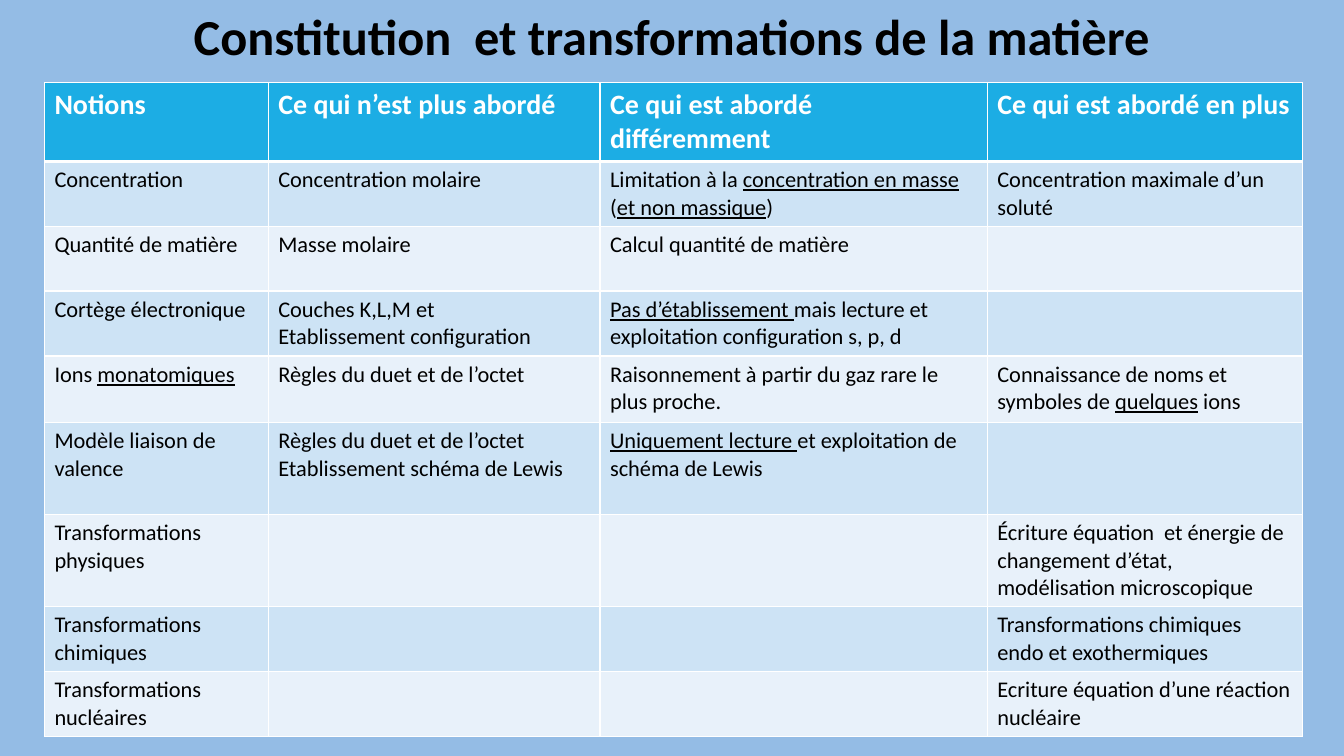
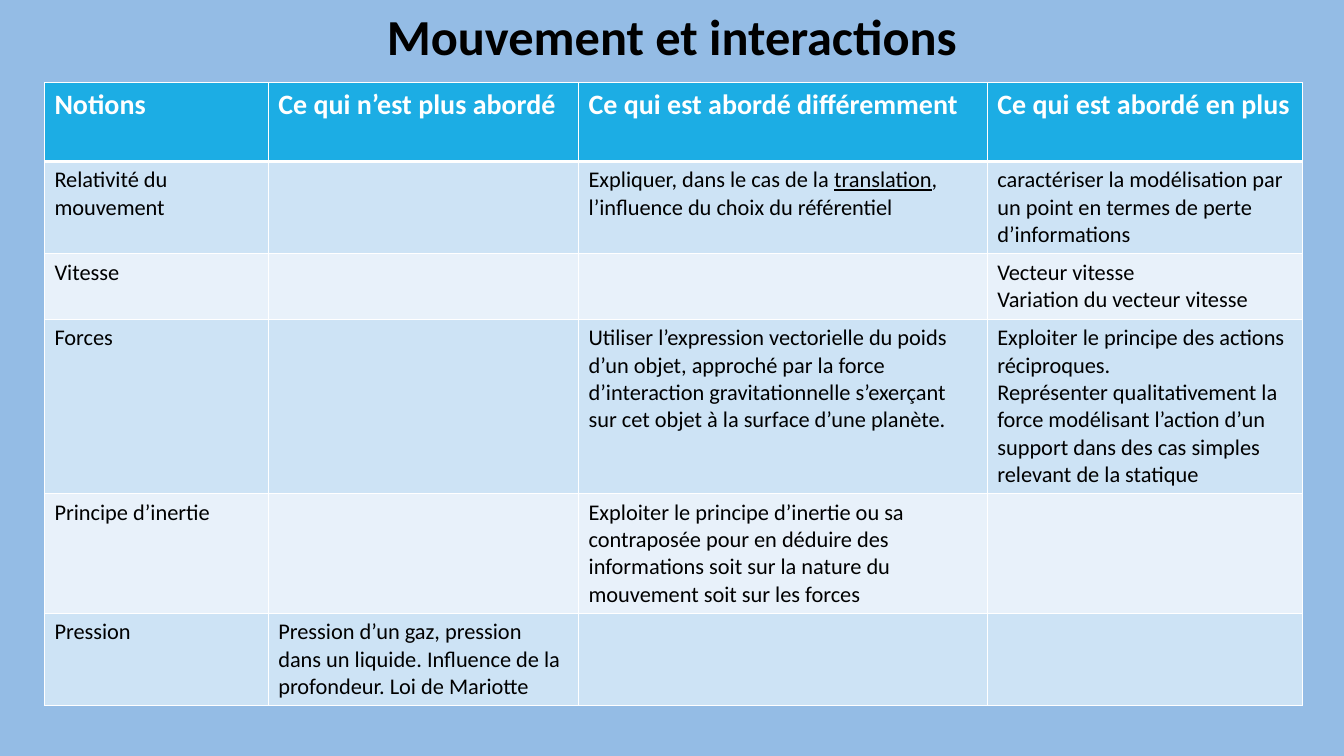
from dataclasses import dataclass

from lxml.etree import SubElement
from pptx import Presentation
from pptx.dml.color import RGBColor
from pptx.enum.text import MSO_ANCHOR, PP_ALIGN
from pptx.oxml.ns import qn
from pptx.util import Cm, Pt


@dataclass(frozen=True)
class Theme:
    font: str = "Calibri"
    background: str = "94BCE5"
    header: str = "1CADE4"
    bands: tuple = ("CDE3F5", "E8F1FA")
    text: str = "000000"
    light: str = "FFFFFF"
    title_size: int = 36
    header_size: int = 20
    body_size: int = 16
    border: int = 1
    header_border: int = 3


HEADINGS = (
    "Notions",
    "Ce qui n’est plus abordé",
    "Ce qui est abordé différemment",
    "Ce qui est abordé en plus",
)

# Underscores enclose underlined words; each row starts with its height in cm.
MATTER_ROWS = [
    (1.63, "Concentration", "Concentration molaire",
     "Limitation à la _concentration en masse _(_et non massique_)",
     "Concentration maximale d’un soluté"),
    (1.63, "Quantité de matière", "Masse molaire", "Calcul quantité de matière", ""),
    (1.63, "Cortège électronique", "Couches K,L,M et\nEtablissement configuration",
     "_Pas d’établissement _mais lecture et exploitation configuration s, p, d", ""),
    (1.67, "Ions _monatomiques_", "Règles du duet et de l’octet",
     "Raisonnement à partir du gaz rare le plus proche.",
     "Connaissance de noms et symboles de _quelques_ ions"),
    (2.32, "Modèle liaison de valence",
     "Règles du duet et de l’octet\nEtablissement schéma de Lewis",
     "_Uniquement lecture _et exploitation de schéma de Lewis", ""),
    (2.32, "Transformations\nphysiques", "", "",
     "Écriture équation  et énergie de changement d’état, modélisation microscopique"),
    (1.63, "Transformations chimiques", "", "",
     "Transformations chimiques endo et exothermiques"),
    (1.63, "Transformations nucléaires", "", "",
     "Ecriture équation d’une réaction nucléaire"),
]

MOTION_ROWS = [
    (2.26, "Relativité du mouvement", "",
     "Expliquer, dans le cas de la _translation_, l’influence du choix du référentiel",
     "caractériser la modélisation par un point en termes de perte d’informations"),
    (1.65, "Vitesse", "", "", "Vecteur vitesse\nVariation du vecteur vitesse"),
    (4.3, "Forces", "",
     "Utiliser l’expression vectorielle du poids d’un objet, approché par la force "
     "d’interaction gravitationnelle s’exerçant sur cet objet à la surface d’une planète.",
     "Exploiter le principe des actions réciproques.\n"
     "Représenter qualitativement la force modélisant l’action d’un support "
     "dans des cas simples relevant de la statique"),
    (2.96, "Principe d’inertie", "",
     "Exploiter le principe d’inertie ou sa contraposée pour en déduire des "
     "informations soit sur la nature du mouvement soit sur les forces", ""),
    (2.26, "Pression",
     "Pression d’un gaz, pression dans un liquide. Influence de la profondeur. "
     "Loi de Mariotte", "", ""),
]


def write(frame, text, *, font, size, color, bold=False, align=PP_ALIGN.LEFT):
    """Fill a text frame: newlines part paragraphs, underscores enclose underlines."""
    for index, line in enumerate(text.split("\n")):
        para = frame.add_paragraph() if index else frame.paragraphs[0]
        para.alignment = align
        for position, words in enumerate(line.split("_")):
            if not words:
                continue
            span = para.add_run()
            span.text = words
            span.font.name = font
            span.font.size = Pt(size)
            span.font.bold = bold
            span.font.underline = position % 2 == 1
            span.font.color.rgb = RGBColor.from_string(color)


def set_borders(cell, color, **widths):
    """Draw cell borders, given in points by side; call before setting the fill."""
    properties = cell._tc.get_or_add_tcPr()
    for side in ("L", "R", "T", "B"):
        line = SubElement(properties, qn(f"a:ln{side}"), w=str(Pt(widths[side])))
        fill = SubElement(line, qn("a:solidFill"))
        SubElement(fill, qn("a:srgbClr"), val=color)


class ProgrammeDeck:
    def __init__(self, theme):
        self.theme = theme
        self.deck = Presentation()
        self.deck.slide_width, self.deck.slide_height = Cm(33.87), Cm(19.05)
        fill = self.deck.slide_master.background.fill
        fill.solid()
        fill.fore_color.rgb = RGBColor.from_string(theme.background)
        self.page = None

    def add_page(self, title):
        theme = self.theme
        self.page = self.deck.slides.add_slide(self.deck.slide_layouts.get_by_name("Title Only"))
        box = self.page.shapes.title
        box.left, box.top = Cm(0), Cm(0)
        box.width, box.height = self.deck.slide_width, Cm(1.8)
        box.text_frame.vertical_anchor = MSO_ANCHOR.TOP
        write(box.text_frame, title, font=theme.font, size=theme.title_size,
              color=theme.text, bold=True, align=PP_ALIGN.CENTER)

    def add_comparison(self, widths, rows):
        all_rows = [(1.99, *HEADINGS), *rows]
        heights = [row[0] for row in all_rows]
        table = self.page.shapes.add_table(
            len(all_rows), len(widths), Cm(1.12), Cm(2.08),
            Cm(sum(widths)), Cm(sum(heights))).table
        for column, width in zip(table.columns, widths):
            column.width = Cm(width)
        for row_index, (height, *texts) in enumerate(all_rows):
            table.rows[row_index].height = Cm(height)
            for column_index, text in enumerate(texts):
                self.fill_cell(table.cell(row_index, column_index), row_index, text)

    def fill_cell(self, cell, row_index, text):
        theme = self.theme
        is_header = row_index == 0
        thin, thick = theme.border, theme.header_border
        set_borders(cell, theme.light, L=thin, R=thin,
                    T=thick if row_index == 1 else thin, B=thick if is_header else thin)
        band = theme.bands[(row_index - 1) % len(theme.bands)]
        cell.fill.solid()
        cell.fill.fore_color.rgb = RGBColor.from_string(theme.header if is_header else band)
        write(cell.text_frame, text, font=theme.font, bold=is_header,
              size=theme.header_size if is_header else theme.body_size,
              color=theme.light if is_header else theme.text)

    def save(self):
        self.deck.save("out.pptx")


def main():
    programme = ProgrammeDeck(Theme())
    programme.add_page("Constitution  et transformations de la matière")
    programme.add_comparison((5.64, 8.36, 9.76, 7.94), MATTER_ROWS)
    programme.add_page("Mouvement et interactions")
    programme.add_comparison((5.64, 7.82, 10.3, 7.94), MOTION_ROWS)
    programme.save()


if __name__ == "__main__":
    main()
